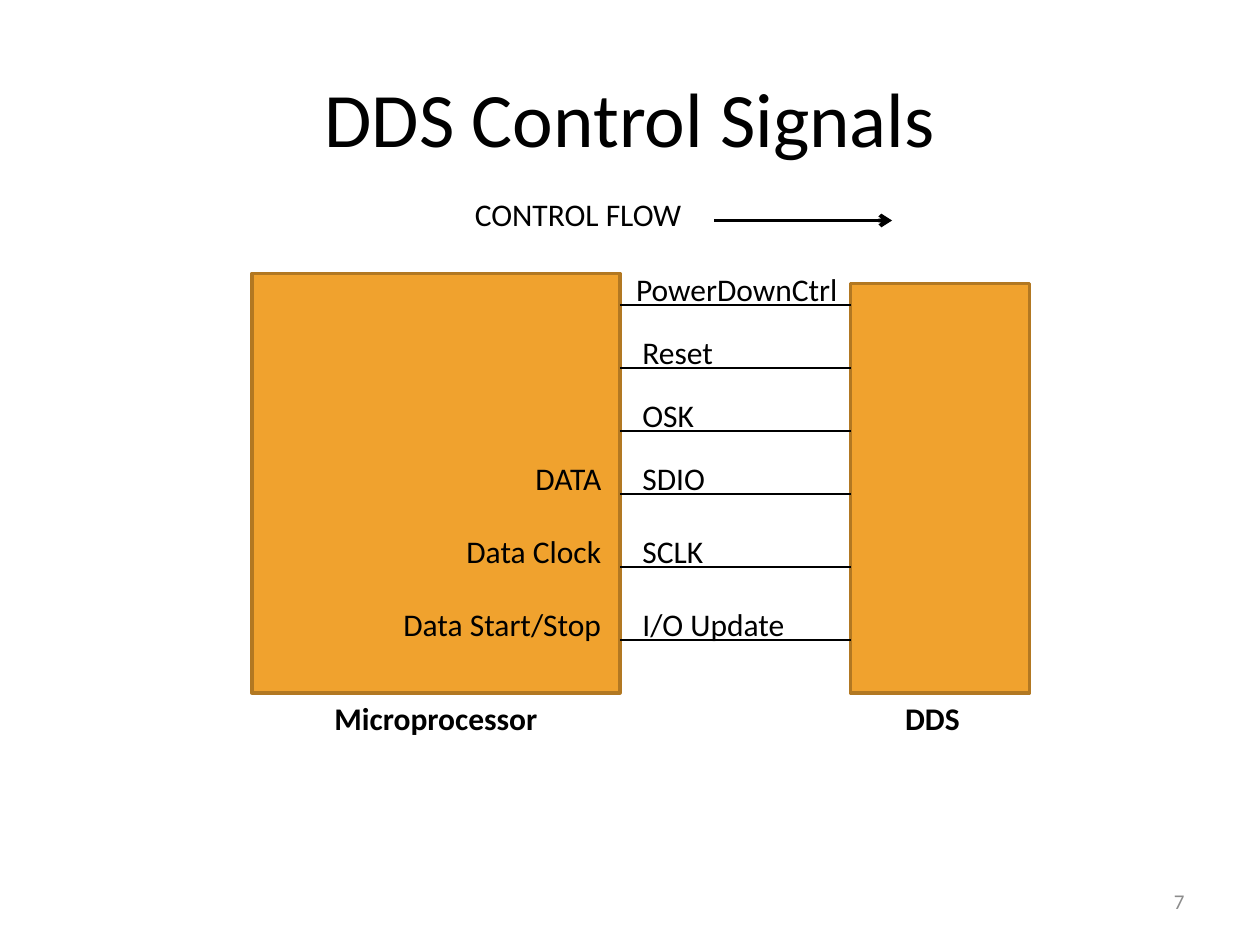
from lxml.etree import SubElement
from pptx import Presentation
from pptx.dml.color import RGBColor
from pptx.enum.shapes import MSO_CONNECTOR, MSO_SHAPE
from pptx.enum.text import MSO_ANCHOR, PP_ALIGN
from pptx.oxml.ns import qn
from pptx.util import Inches, Pt

BLACK = RGBColor(0x00, 0x00, 0x00)
GRAY = RGBColor(0x8C, 0x8C, 0x8C)
ORANGE = RGBColor(0xF0, 0xA2, 0x2E)
BROWN = RGBColor(0xB2, 0x78, 0x22)
FONT = "Calibri"

# Content: line height, DDS pin, label left, microprocessor signal
TITLE = "DDS Control Signals"
SIGNALS = [
    (2.42, "PowerDownCtrl", 4.95, None),
    (2.92, "Reset", 5, None),
    (3.42, "OSK", 5, None),
    (3.92, "SDIO", 5, "DATA"),
    (4.5, "SCLK", 5, "Data Clock"),
    (5.08, "I/O Update", 5, "Data Start/Stop"),
]
# Blocks: left, top, width, height; caption left, width
BLOCKS = {
    "Microprocessor": ((2, 2.17, 2.92, 3.33), (2, 2.92)),
    "DDS": ((6.75, 2.25, 1.42, 3.25), (6.9, 1)),
}
BUS_LEFT, BUS_RIGHT = 4.92, 6.75
LABEL_RISE, LABEL_H = 0.33, 0.4
SIGNAL_LEFT, SIGNAL_W = 2.77, 2.1


def write(tf, text, size=18, color=BLACK, bold=False, align=PP_ALIGN.LEFT,
          anchor=MSO_ANCHOR.TOP):
    tf.word_wrap = True
    tf.vertical_anchor = anchor
    p = tf.paragraphs[0]
    p.alignment = align
    r = p.add_run()
    r.text = text
    r.font.name = FONT
    r.font.size = Pt(size)
    r.font.bold = bold
    r.font.color.rgb = color


def add_label(s, text, left, top, width, **fmt):
    sp = s.shapes.add_textbox(Inches(left), Inches(top), Inches(width), Inches(LABEL_H))
    write(sp.text_frame, text, **fmt)


def add_line(s, x1, x2, y, weight, arrow=False):
    line = s.shapes.add_connector(
        MSO_CONNECTOR.STRAIGHT, Inches(x1), Inches(y), Inches(x2), Inches(y))
    line.line.color.rgb = BLACK
    line.line.width = Pt(weight)
    if arrow:
        SubElement(line.line._get_or_add_ln(), qn("a:tailEnd"), type="arrow")
    SubElement(line._element.spPr, qn("a:effectLst"))


def add_block(s, box):
    sp = s.shapes.add_shape(MSO_SHAPE.RECTANGLE, *map(Inches, box))
    sp.shadow.inherit = False
    sp.fill.solid()
    sp.fill.fore_color.rgb = ORANGE
    sp.line.color.rgb = BROWN
    sp.line.width = Pt(2)


def main():
    prs = Presentation()
    prs.slide_width, prs.slide_height = Inches(10), Inches(7.5)
    s = prs.slides.add_slide(prs.slide_layouts[5])

    # Title and slide number
    title = s.shapes.title
    title.left, title.top = Inches(0.5), Inches(0.3)
    title.width, title.height = Inches(9), Inches(1.25)
    write(title.text_frame, TITLE, size=44, align=PP_ALIGN.CENTER,
          anchor=MSO_ANCHOR.MIDDLE)
    add_label(s, "7", 7.17, 6.95, 2.33, size=12, color=GRAY,
              align=PP_ALIGN.RIGHT, anchor=MSO_ANCHOR.MIDDLE)

    # Blocks with captions below
    for name, (box, (left, width)) in BLOCKS.items():
        add_block(s, box)
        add_label(s, name, left, box[1] + box[3], width, bold=True,
                  align=PP_ALIGN.CENTER)

    # Signal lines and their names
    for y, pin, left, signal in SIGNALS:
        add_line(s, BUS_LEFT, BUS_RIGHT, y, 0.75)
        add_label(s, pin, left, y - LABEL_RISE, 1.85)
        if signal:
            add_label(s, signal, SIGNAL_LEFT, y - LABEL_RISE, SIGNAL_W,
                      align=PP_ALIGN.RIGHT)

    # Direction of control
    add_label(s, "CONTROL FLOW", 3.67, 1.5, 2)
    add_line(s, 5.67, 7.08, 1.75, 2.25, arrow=True)

    prs.save("out.pptx")


if __name__ == "__main__":
    main()
